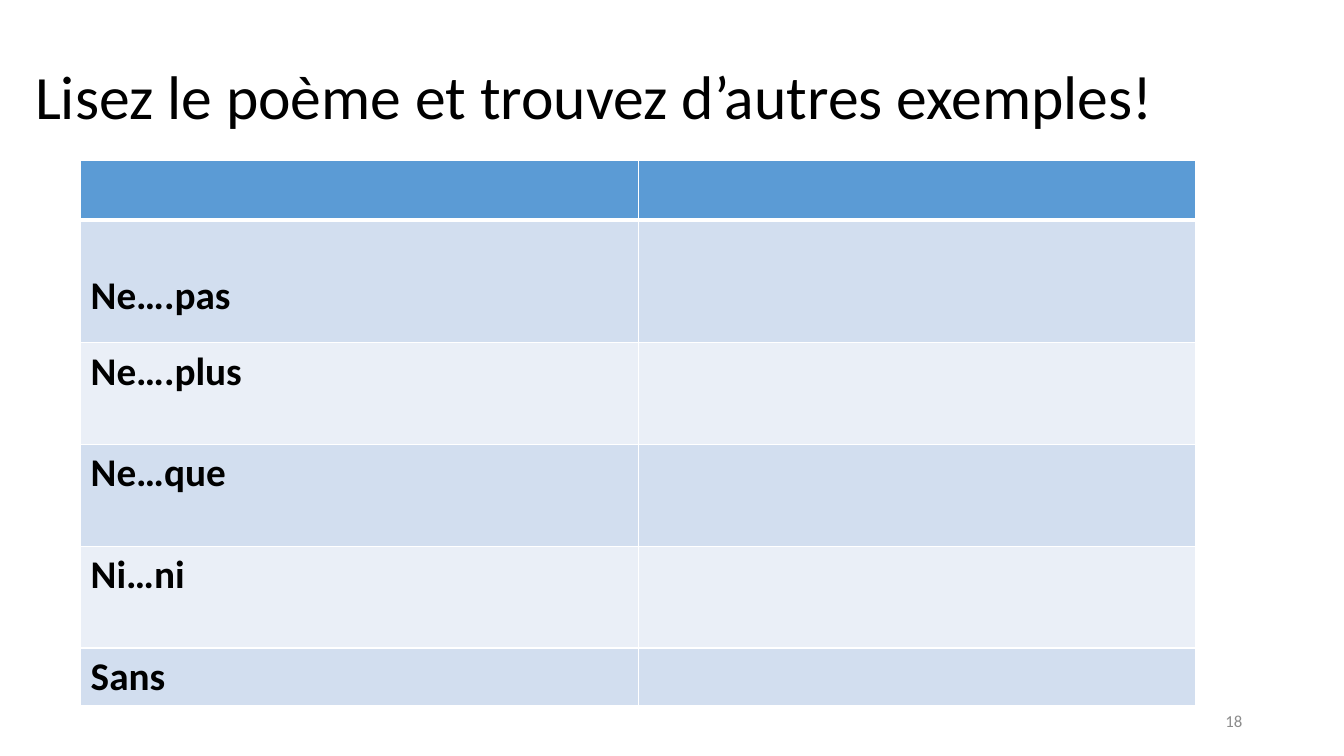
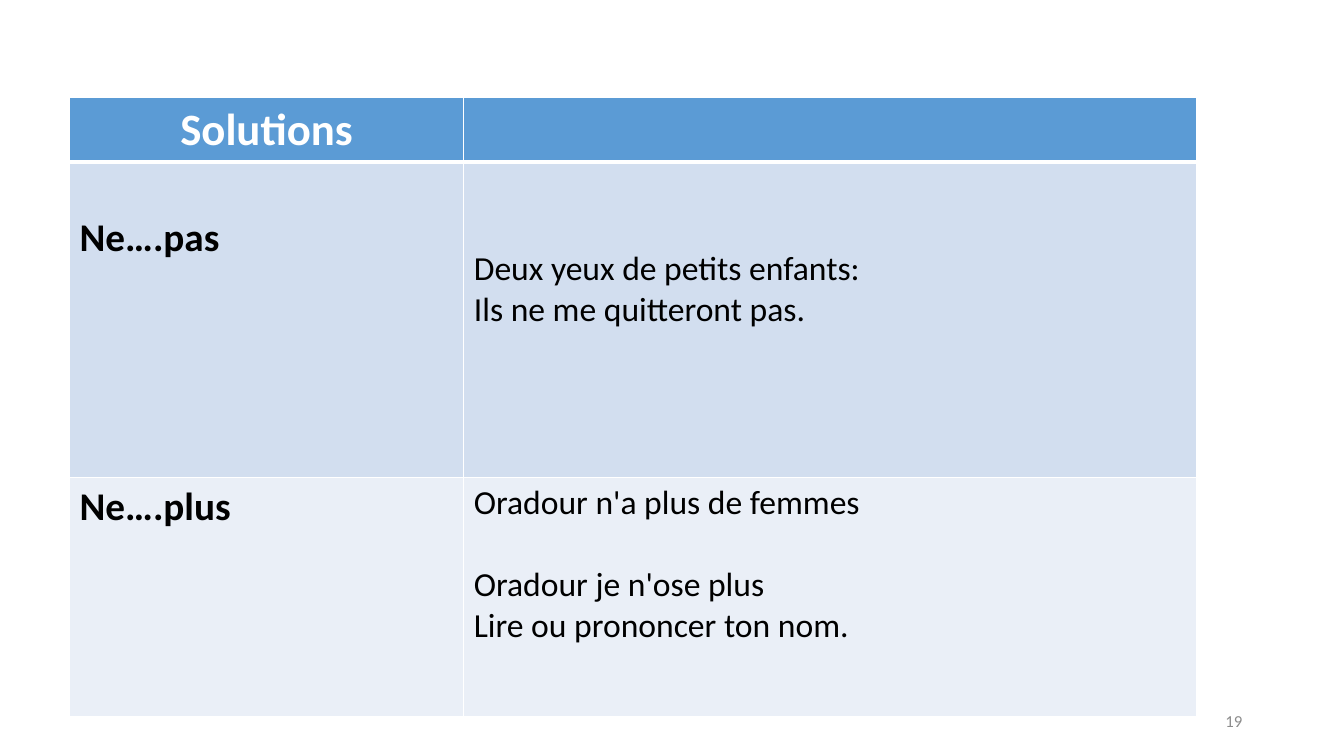
from dataclasses import dataclass

from lxml.etree import SubElement
from pptx import Presentation
from pptx.dml.color import RGBColor
from pptx.enum.text import MSO_ANCHOR, PP_ALIGN
from pptx.oxml.ns import qn
from pptx.util import Emu, Pt

EMU_PER_PX = 9144  # 100 px to the inch
FONT = "Calibri"
COLORS = {
    "ink": "000000",
    "white": "FFFFFF",
    "header": "5B9BD5",
    "band_dark": "D2DEEF",
    "band_light": "EAEFF7",
    "page_number": "8C8C8C",
}
CELL_MARGIN = 5
THIN, THICK = 1, 3


@dataclass(frozen=True)
class TextStyle:
    size: int
    color: str = "ink"
    bold: bool = False
    align: PP_ALIGN = PP_ALIGN.LEFT
    line_spacing: float = 1.0


TITLE = TextStyle(44, line_spacing=0.9)
HEADING = TextStyle(32, "white", bold=True, align=PP_ALIGN.CENTER)
TERM = TextStyle(28, bold=True)
VERSE = TextStyle(24)
PAGE_NUMBER = TextStyle(12, "page_number", align=PP_ALIGN.RIGHT)


@dataclass(frozen=True)
class Line:
    text: str
    gap_after: int = 0  # points


@dataclass(frozen=True)
class CellText:
    lines: tuple[Line, ...]
    style: TextStyle
    drop: int = 0  # px below the usual top margin


@dataclass(frozen=True)
class Row:
    height: int
    cells: tuple[CellText | None, ...]


@dataclass(frozen=True)
class Grid:
    left: int
    top: int
    widths: tuple[int, ...]
    rows: tuple[Row, ...]


@dataclass(frozen=True)
class Page:
    number: int
    grid: Grid
    title: str = ""


def term(text: str, drop: int = 0) -> CellText:
    return CellText((Line(text),), TERM, drop)


PAGES = (
    Page(
        18,
        Grid(80, 159, (553, 553), (
            Row(59, (None, None)),
            Row(122, (term("Ne….pas", drop=47), None)),
            Row(101, (term("Ne….plus"), None)),
            Row(101, (term("Ne…que"), None)),
            Row(101, (term("Ni…ni"), None)),
            Row(57, (term("Sans"), None)),
        )),
        "Lisez le poème et trouvez d’autres exemples!",
    ),
    Page(
        19,
        Grid(69, 97, (391, 727), (
            Row(64, (CellText((Line("Solutions"),), HEADING), None)),
            Row(313, (
                term("Ne….pas", drop=47),
                CellText((
                    Line("Deux yeux de petits enfants:"),
                    Line("Ils ne me quitteront pas."),
                ), VERSE, drop=81),
            )),
            Row(237, (
                term("Ne….plus"),
                CellText((
                    Line("Oradour n'a plus de femmes", gap_after=29),
                    Line("Oradour je n'ose plus"),
                    Line("Lire ou prononcer ton nom."),
                ), VERSE),
            )),
        )),
    ),
)


def px(length: int) -> Emu:
    return Emu(length * EMU_PER_PX)


def color(name: str) -> RGBColor:
    return RGBColor.from_string(COLORS[name])


def write_lines(frame, lines: tuple[Line, ...], style: TextStyle) -> None:
    for index, line in enumerate(lines):
        para = frame.add_paragraph() if index else frame.paragraphs[0]
        para.alignment = style.align
        para.line_spacing = style.line_spacing
        para.space_after = Pt(line.gap_after)
        span = para.add_run()
        span.text = line.text
        span.font.name = FONT
        span.font.size = Pt(style.size)
        span.font.bold = style.bold
        span.font.color.rgb = color(style.color)


def add_text(slide, bounds: tuple[int, int, int, int], text: str,
             style: TextStyle) -> None:
    box = slide.shapes.add_textbox(*map(px, bounds))
    frame = box.text_frame
    frame.word_wrap = True
    frame.vertical_anchor = MSO_ANCHOR.MIDDLE
    write_lines(frame, (Line(text),), style)


def add_borders(cell, top: int, bottom: int) -> None:
    """Draw white cell borders; must run before the cell fill is set."""
    properties = cell._tc.get_or_add_tcPr()
    sides = {"L": THIN, "R": THIN, "T": top, "B": bottom}
    for side, points in sides.items():
        border = SubElement(properties, qn(f"a:ln{side}"), w=str(Pt(points)))
        fill = SubElement(border, qn("a:solidFill"))
        SubElement(fill, qn("a:srgbClr"), val=COLORS["white"])


def row_fill(index: int) -> str:
    if index == 0:
        return "header"
    return "band_dark" if index % 2 else "band_light"


def add_grid(slide, grid: Grid) -> None:
    height = sum(row.height for row in grid.rows)
    frame = slide.shapes.add_table(
        len(grid.rows), len(grid.widths),
        px(grid.left), px(grid.top), px(sum(grid.widths)), px(height))
    table = frame.table
    for column, width in zip(table.columns, grid.widths):
        column.width = px(width)
    for index, row in enumerate(grid.rows):
        table.rows[index].height = px(row.height)
        for column_index, content in enumerate(row.cells):
            cell = table.cell(index, column_index)
            add_borders(cell,
                        top=THICK if index == 1 else THIN,
                        bottom=THICK if index == 0 else THIN)
            cell.fill.solid()
            cell.fill.fore_color.rgb = color(row_fill(index))
            if content:
                cell.margin_top = px(CELL_MARGIN + content.drop)
                write_lines(cell.text_frame, content.lines, content.style)


def add_page(deck, page: Page) -> None:
    slide = deck.slides.add_slide(deck.slide_layouts[6])
    if page.title:
        add_text(slide, (25, 28, 1216, 141), page.title, TITLE)
    add_grid(slide, page.grid)
    add_text(slide, (942, 695, 300, 40), str(page.number), PAGE_NUMBER)


def main() -> None:
    deck = Presentation()
    deck.slide_width, deck.slide_height = px(1333), px(750)
    for page in PAGES:
        add_page(deck, page)
    deck.save("out.pptx")


if __name__ == "__main__":
    main()
